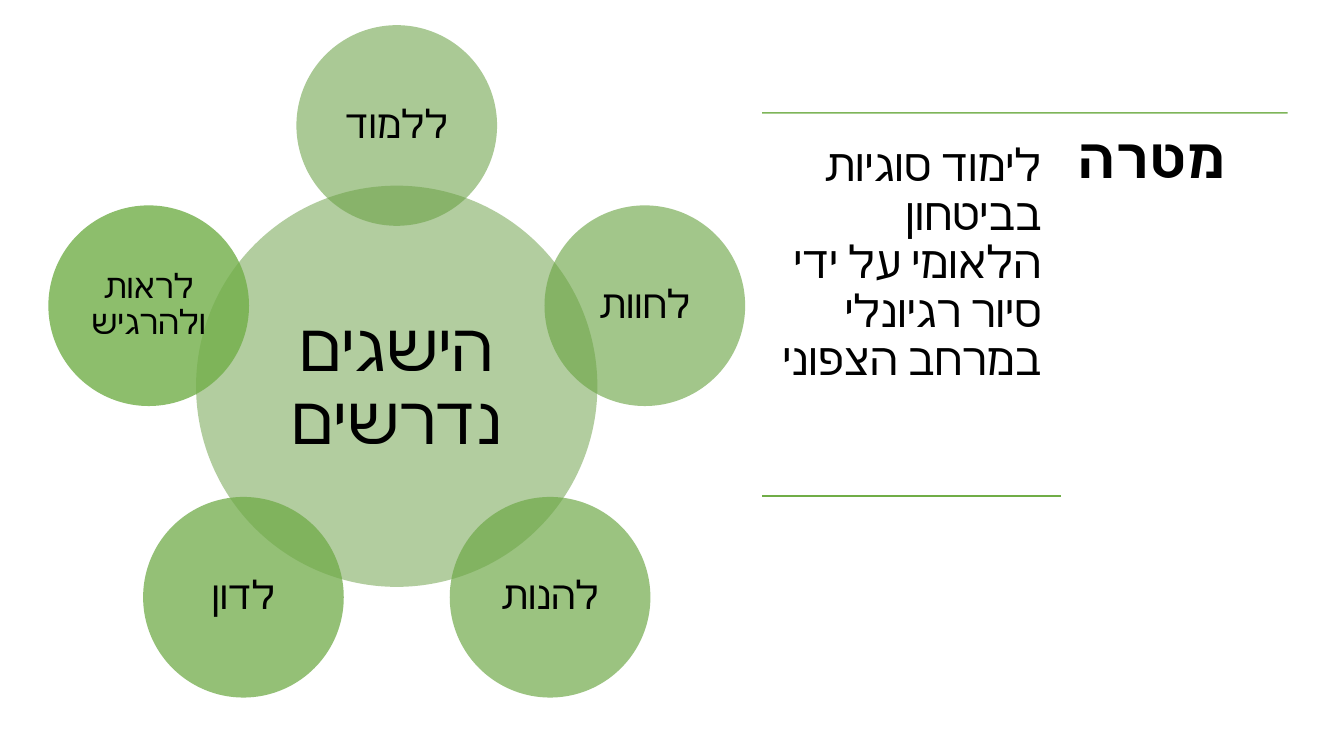
from dataclasses import dataclass
from math import cos, pi, sin

from lxml.etree import SubElement
from pptx import Presentation
from pptx.dml.color import RGBColor as Rgb
from pptx.enum.shapes import MSO_CONNECTOR as Link, MSO_SHAPE as Form
from pptx.enum.text import MSO_ANCHOR as Anchor, MSO_AUTO_SIZE as Fit, PP_ALIGN as Align
from pptx.oxml.ns import qn
from pptx.util import Inches, Pt


@dataclass(frozen=True)
class Theme:
    font: str = "Cabin"
    ink: str = "000000"
    rule: str = "70AD47"
    hub: str = "669D40"
    spokes: tuple = ("68A042", "6AA443", "6CA745", "6FAA47", "71AE48")
    hub_size: int = 48
    title_size: int = 40
    body_size: int = 32
    spoke_size: int = 28
    small_size: int = 24


THEME = Theme()
HUB = "הישגים נדרשים"
SPOKES = (
    ("ללמוד", THEME.spoke_size),
    ("לחוות", THEME.spoke_size),
    ("להנות", THEME.spoke_size),
    ("לדון", THEME.spoke_size),
    ("לראות ולהרגיש", THEME.small_size),
)
TITLE = "מטרה"
GOAL = "לימוד סוגיות בביטחון הלאומי על ידי סיור רגיונלי במרחב הצפוני"


def fade(fill, alpha):
    """Set the opacity, in percent, of a solid fill element."""
    color = fill.find(".//" + qn("a:srgbClr"))
    SubElement(color, qn("a:alpha")).set("val", str(alpha * 1000))


def write(shape, text, size, inset, align, anchor, bold=False):
    frame = shape.text_frame
    frame.text = text
    frame.word_wrap = True
    frame.auto_size = Fit.NONE
    frame.vertical_anchor = anchor
    frame.margin_left = frame.margin_right = Inches(inset)
    frame.margin_top = frame.margin_bottom = Inches(inset)
    para = frame.paragraphs[0]
    para.alignment = align
    para.line_spacing = 0.9
    para.space_before = Pt(0)
    font = para.font
    font.name, font.size, font.bold = THEME.font, Pt(size), bold
    font.color.rgb = Rgb.from_string(THEME.ink)
    props = para._p.pPr.find(qn("a:defRPr"))
    SubElement(props, qn("a:cs")).set("typeface", THEME.font)
    return para


def disc(slide, x, y, width, color, alpha, text, size, inset):
    """Draw a translucent labelled circle centred on x, y."""
    shape = slide.shapes.add_shape(
        Form.OVAL, Inches(x - width / 2), Inches(y - width / 2),
        Inches(width), Inches(width))
    shape.shadow.inherit = False
    shape.fill.solid()
    shape.fill.fore_color.rgb = Rgb.from_string(color)
    fade(shape._element.spPr, alpha)
    shape.line.fill.background()
    write(shape, text, size, inset, Align.CENTER, Anchor.MIDDLE)


def wheel(slide, left, top, width):
    """Draw the hub and its ring of circles, the first one at the top."""
    hub = width * 0.576
    spoke = hub / 2
    ring = hub * 0.65
    x, y = left + width / 2, top + spoke / 2 + ring
    disc(slide, x, y, hub, THEME.hub, 50, HUB, THEME.hub_size, 0.07)
    for i, ((text, size), color) in enumerate(zip(SPOKES, THEME.spokes)):
        turn = 2 * pi * i / len(SPOKES)
        disc(slide, x + ring * sin(turn), y - ring * cos(turn), spoke,
             color, 56 + 6 * i, text, size, 0.04)


def rule(slide, left, right, y, alpha=100):
    line = slide.shapes.add_connector(
        Link.STRAIGHT, Inches(left), Inches(y), Inches(right), Inches(y))
    line.line.color.rgb = Rgb.from_string(THEME.rule)
    line.line.width = Pt(1)
    props = line._element.spPr
    fade(props, alpha)
    SubElement(props, qn("a:effectLst"))


def place(shape, left, top, width, height):
    shape.left, shape.top = Inches(left), Inches(top)
    shape.width, shape.height = Inches(width), Inches(height)


def goal(slide, left, top, width, height):
    """Set the title on the right and the goal on the left, between rules."""
    split = left + width - 2.25
    rule(slide, left, left + width, top, 90)
    title, body = slide.shapes.title, slide.placeholders[1]
    place(title, split, top, 2.25, height)
    write(title, TITLE, THEME.title_size, 0.17, Align.LEFT, Anchor.TOP, True)
    place(body, left, top + 0.17, split - left - 0.06, height - 0.34)
    para = write(body, GOAL, THEME.body_size, 0.13, Align.RIGHT, Anchor.TOP)
    props = para._p.pPr
    for name, value in (("marL", "0"), ("indent", "0"), ("rtl", "1")):
        props.set(name, value)
    props.find(qn("a:defRPr")).addprevious(SubElement(props, qn("a:buNone")))
    rule(slide, left, split, top + height - 0.17)


def main():
    deck = Presentation()
    deck.slide_width, deck.slide_height = Inches(13.33), Inches(7.5)
    slide = deck.slides.add_slide(deck.slide_layouts[1])
    wheel(slide, 0.48, 0.25, 6.91)
    goal(slide, 7.56, 1.12, 5.21, 3.97)
    deck.save("out.pptx")


if __name__ == "__main__":
    main()
